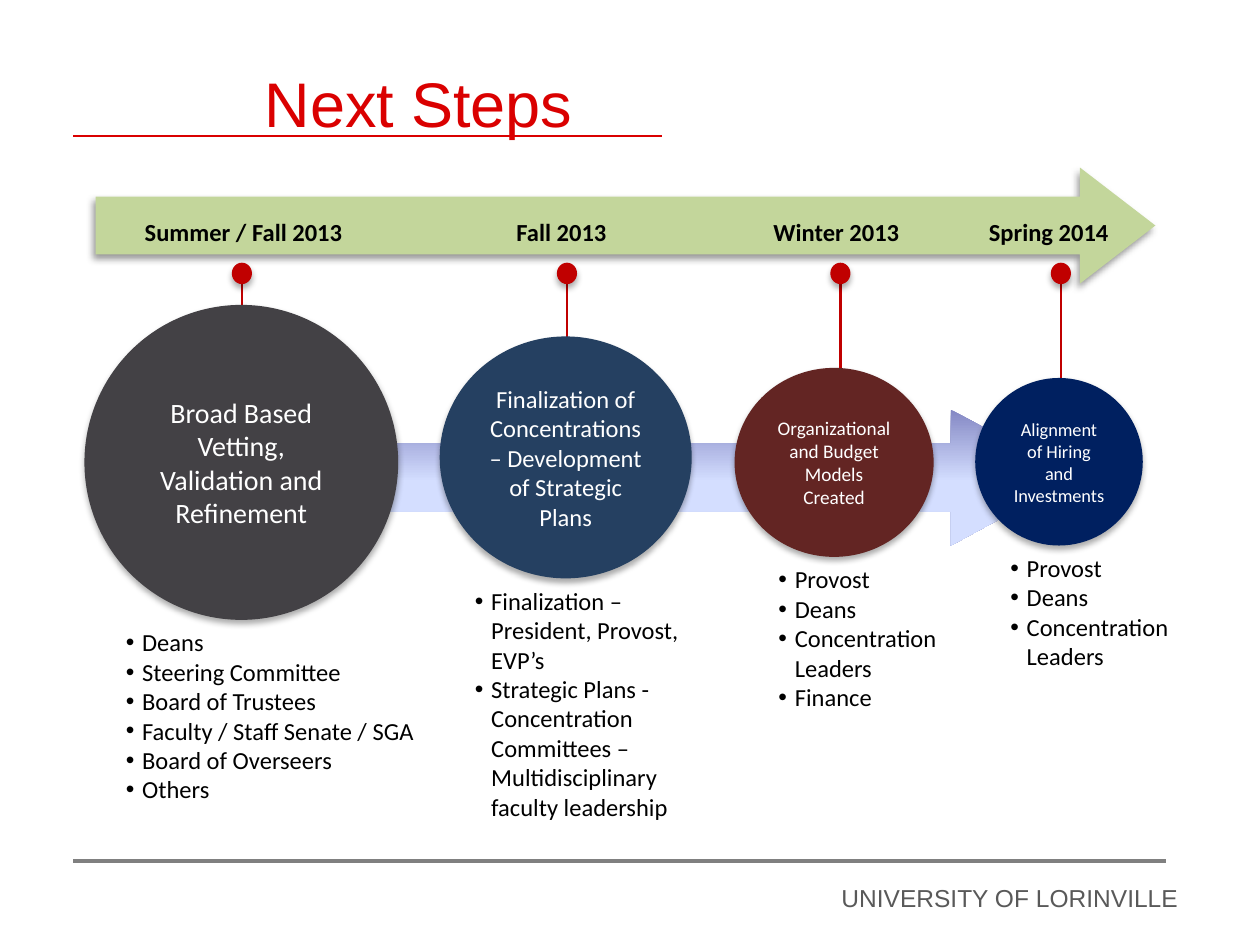
from pptx import Presentation
from pptx.dml.color import RGBColor
from pptx.enum.shapes import MSO_CONNECTOR, MSO_SHAPE
from pptx.enum.text import MSO_ANCHOR, MSO_AUTO_SIZE, PP_ALIGN
from pptx.oxml.ns import qn
from pptx.util import Inches, Pt
from lxml.etree import SubElement

RED = RGBColor(0xDA, 0x00, 0x00)
PIN = RGBColor(0xC0, 0x00, 0x00)
GREEN = RGBColor(0xC3, 0xD6, 0x9B)
VIOLET = RGBColor(0x84, 0x88, 0xC4)
PALE = RGBColor(0xD4, 0xDE, 0xFF)
GRAY = RGBColor(0x80, 0x80, 0x80)
DARK = RGBColor(0x59, 0x59, 0x59)
BLACK = RGBColor(0, 0, 0)
WHITE = RGBColor(255, 255, 255)

TITLE = "Next Steps"
FOOTER = "UNIVERSITY OF LORINVILLE"
STEPS = [
    dict(date="Summer / Fall 2013", date_box=(1.05, 1.78), pin=1.92,
         circle=(0.67, 2.42, 2.49, 2.5), fill=RGBColor(0x43, 0x41, 0x45), size=16,
         text=["Broad Based Vetting, Validation and Refinement"],
         list_box=(0.9, 2.6, 1.99),
         who=["Deans", "Steering Committee", "Board of Trustees",
              "Faculty / Staff Senate / SGA", "Board of Overseers", "Others"]),
    dict(date="Fall 2013", date_box=(4, 0.92), pin=4.5,
         circle=(3.49, 2.67, 2, 1.92), fill=RGBColor(0x25, 0x40, 0x61), size=14,
         text=["Finalization of Concentrations – Development of Strategic Plans"],
         list_box=(3.67, 2.08, 2.22),
         who=["Finalization – President, Provost, EVP’s",
              "Strategic Plans - Concentration Committees – "
              "Multidisciplinary faculty leadership"]),
    dict(date="Winter 2013", date_box=(6.04, 1.21), pin=6.67,
         circle=(5.83, 2.92, 1.58, 1.5), fill=RGBColor(0x63, 0x25, 0x23), size=11,
         text=["Organizational and Budget Models", "Created"],
         list_box=(6.08, 1.5, 1.28),
         who=["Provost", "Deans", "Concentration Leaders", "Finance"]),
    dict(date="Spring 2014", date_box=(7.75, 1.16), pin=8.42,
         circle=(7.74, 3, 1.33, 1.33), fill=RGBColor(0x00, 0x20, 0x60), size=10.5,
         text=["Alignment of Hiring and Investments"],
         list_box=(7.92, 1.58, 1.04),
         who=["Provost", "Deans", "Concentration Leaders"]),
]
PIN_Y, PIN_W, PIN_H = 2.17, 0.16, 0.17
SOFT = dict(alpha=32, blur=3.5, dist=2.2, angle=90)
DEEP = dict(alpha=40, blur=4, dist=3, angle=135)


def write(shape, lines, size, color=BLACK, font="Calibri", bold=False,
          align=PP_ALIGN.LEFT, anchor=MSO_ANCHOR.TOP, wrap=True, bullet=False):
    tf = shape.text_frame
    tf.auto_size = MSO_AUTO_SIZE.NONE
    tf.word_wrap, tf.vertical_anchor = wrap, anchor
    for i, line in enumerate(lines):
        p = tf.add_paragraph() if i else tf.paragraphs[0]
        p.alignment = align
        r = p.add_run()
        r.text = line
        f = r.font
        f.name, f.size, f.bold = font, Pt(size), bold
        f.color.rgb = color
        if bullet:
            pPr = p._p.get_or_add_pPr()
            pPr.set("marL", str(Inches(0.13)))
            pPr.set("indent", str(-Inches(0.13)))
            SubElement(pPr, qn("a:buFont"), typeface="Arial")
            SubElement(pPr, qn("a:buChar"), char="•")


def add_text(s, box, lines, size, **fmt):
    tb = s.shapes.add_textbox(*map(Inches, box))
    write(tb, lines, size, **fmt)


def add_line(s, x1, y1, x2, y2, color, width):
    ln = s.shapes.add_connector(MSO_CONNECTOR.STRAIGHT, *map(Inches, (x1, y1, x2, y2)))
    ln.line.color.rgb, ln.line.width = color, Pt(width)
    SubElement(ln._element.spPr, qn("a:effectLst"))


def add_figure(s, kind, box, color=None, shadow=None, adj=()):
    sp = s.shapes.add_shape(kind, *map(Inches, box))
    for i, value in enumerate(adj):
        sp.adjustments[i] = value
    sp.line.fill.background()
    if color is not None:
        sp.fill.solid()
        sp.fill.fore_color.rgb = color
    sp.shadow.inherit = False
    if shadow:
        effects = sp._element.spPr.find(qn("a:effectLst"))
        outer = SubElement(effects, qn("a:outerShdw"), blurRad=str(Pt(shadow["blur"])),
                           dist=str(Pt(shadow["dist"])), dir=str(shadow["angle"] * 60000),
                           rotWithShape="0")
        clr = SubElement(outer, qn("a:srgbClr"), val="000000")
        SubElement(clr, qn("a:alpha"), val=str(shadow["alpha"] * 1000))
    return sp


def main():
    """Build the timeline slide and save it."""
    prs = Presentation()
    prs.slide_width, prs.slide_height = Inches(10), Inches(7.5)
    s = prs.slides.add_slide(prs.slide_layouts[5])

    title = s.shapes.title
    title.left, title.top, title.width, title.height = map(Inches, (2, 0.46, 8, 0.71))
    write(title, [TITLE], 36, color=RED, font="Arial")
    add_line(s, 0.58, 1.08, 5.25, 1.08, RED, 1.5)
    add_line(s, 0.58, 6.83, 9.25, 6.83, GRAY, 2.25)
    add_text(s, (6.58, 6.96, 3, 0.34), [FOOTER], 14, color=DARK, font="Arial")

    flow = add_figure(s, MSO_SHAPE.RIGHT_ARROW, (1.87, 3.25, 6.67, 1.08), adj=(0.5, 0.92))
    flow.fill.gradient()
    flow.fill.gradient_angle = 270
    for stop, position, color in zip(flow.fill.gradient_stops, (0, 0.53), (VIOLET, PALE)):
        stop.position, stop.color.rgb = position, color
    add_figure(s, MSO_SHAPE.RIGHT_ARROW, (0.76, 1.33, 8.41, 0.92), GREEN, DEEP, (0.5, 0.65))

    for step in STEPS:
        x, (_, top, _, height) = step["pin"], step["circle"]
        add_line(s, x, PIN_Y, x, top + 0.1, PIN, 1.5)
        add_figure(s, MSO_SHAPE.OVAL, (x - PIN_W / 2, PIN_Y - PIN_H / 2, PIN_W, PIN_H),
                   PIN, SOFT)
        circle = add_figure(s, MSO_SHAPE.OVAL, step["circle"], step["fill"], SOFT)
        write(circle, step["text"], step["size"], color=WHITE,
              align=PP_ALIGN.CENTER, anchor=MSO_ANCHOR.MIDDLE)
        left, width = step["date_box"]
        add_text(s, (left, 1.67, width, 0.34), [step["date"]], 14, bold=True, wrap=False)
        left, width, list_height = step["list_box"]
        add_text(s, (left, top + height + 0.01, width, list_height), step["who"], 14,
                 bullet=True)

    prs.save("out.pptx")


if __name__ == "__main__":
    main()
